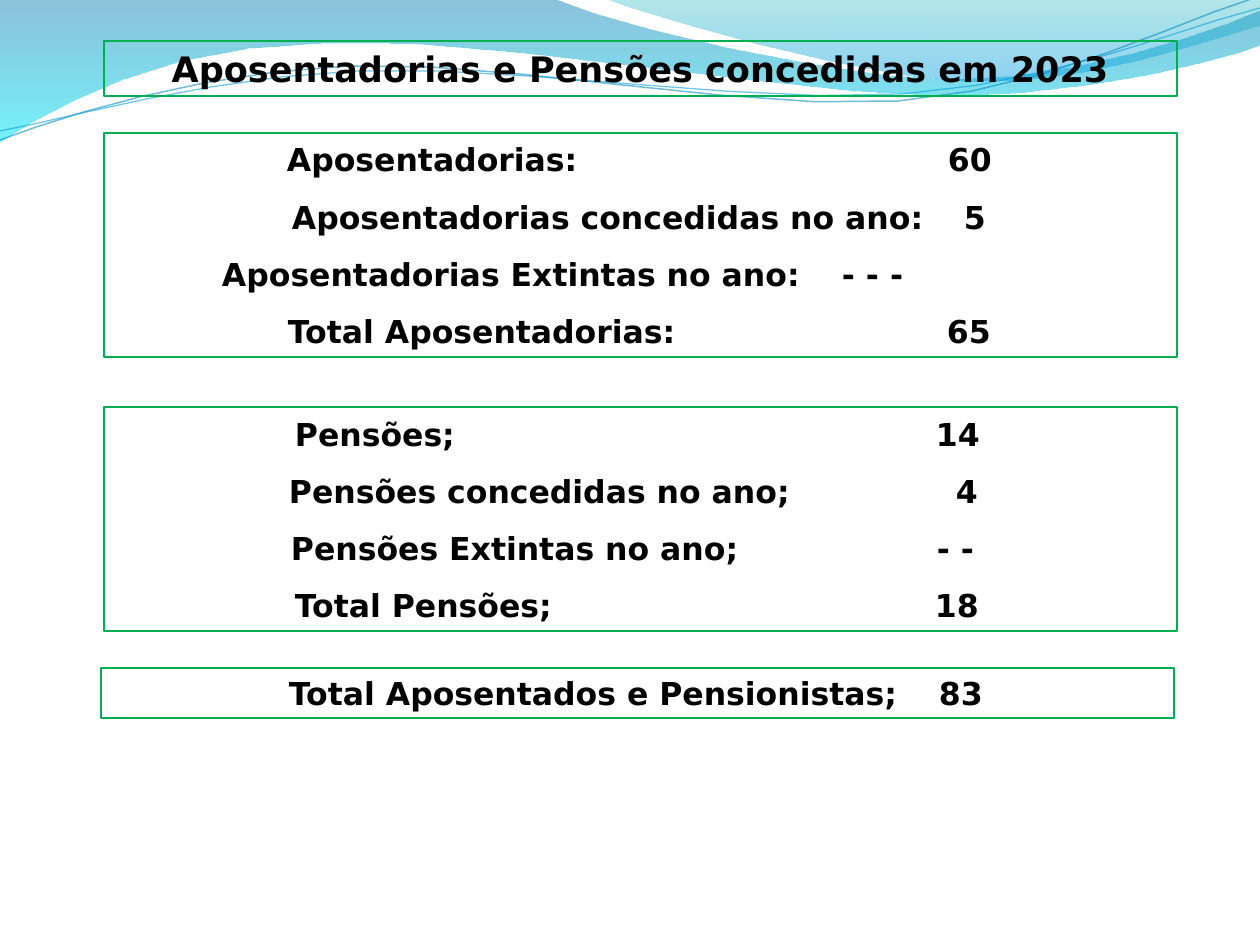
import pptx
import pptx.util
import pptx.dml.color
import pptx.enum.text
import pptx.oxml
import pptx.oxml.ns

RGBColor = pptx.dml.color.RGBColor
GREEN = RGBColor(0x00, 0xB0, 0x50)
BLACK = RGBColor(0x00, 0x00, 0x00)
DEEP_BLUE = RGBColor(0x00, 0x79, 0xAF)
CYAN = RGBColor(0x00, 0xEB, 0xF8)
TEAL = RGBColor(0x00, 0xAD, 0xB6)
SKY = RGBColor(0x00, 0x9B, 0xE5)
LINE_DARK = RGBColor(0x00, 0x8A, 0xBF)
LINE_LIGHT = RGBColor(0x00, 0x9D, 0xD9)

SCALE = 914400 / 126
SLIDE_SIZE = (1260, 945)
BOX_WIDTH = 1073
CURVE_STEPS = 6

TITLE = "Aposentadorias e Pensões concedidas em 2023"
TITLE_BOX = (104, 41, BOX_WIDTH, 55)

# box, then rows of label, value, label x, value x
BLOCKS = [
    ((104, 133, BOX_WIDTH, 224), [
        ("Aposentadorias:", "60", 287, 948),
        ("Aposentadorias concedidas no ano:", "5", 292, 964),
        ("Aposentadorias Extintas no ano:", "- - -", 222, 842),
        ("Total Aposentadorias:", "65", 288, 947),
    ]),
    ((104, 407, BOX_WIDTH, 224), [
        ("Pensões;", "14", 295, 936),
        ("Pensões concedidas no ano;", "4", 289, 956),
        ("Pensões Extintas no ano;", "- -", 291, 937),
        ("Total Pensões;", "18", 295, 935),
    ]),
    ((101, 668, BOX_WIDTH, 50), [
        ("Total Aposentados e Pensionistas;", "83", 289, 939),
    ]),
]

# Two-number steps are straight, six-number steps are Bézier curves
WAVES = [
    {"start": (0, 0),
     "steps": [(554, -1), (600, 21, 837, 79, 955, 79), (1075, 79, 1207, 33, 1260, 11),
               (1261, 45), (1238, 55, 1096, 96, 940, 96), (784, 94, 481, 35, 324, 43),
               (163, 45, 58, 105, -1, 142)],
     "stops": [(DEEP_BLUE, 45), (CYAN, 55)]},
    {"start": (604, -1),
     "steps": [(641, 14, 859, 78, 969, 82), (1079, 87, 1211, 40, 1260, 26), (1260, 0)],
     "stops": [(TEAL, 30), (SKY, 45)]},
    {"start": (0, 140),
     "steps": [(60, 117, 199, 72, 349, 66), (498, 59, 747, 112, 898, 101),
               (1050, 90, 1182, 19, 1257, -3)],
     "line": (LINE_DARK, 0.85, 56)},
    {"start": (0, 131),
     "steps": [(59, 121, 207, 77, 357, 71), (508, 64, 752, 105, 903, 94),
               (1053, 84, 1186, 26, 1260, 8)],
     "line": (LINE_LIGHT, 0.75, 56)},
]

FRAME_FORMAT = {
    "word_wrap": True,
    "auto_size": pptx.enum.text.MSO_AUTO_SIZE.NONE,
    "vertical_anchor": pptx.enum.text.MSO_ANCHOR.MIDDLE,
    "margin_left": 0,
    "margin_right": 0,
    "margin_top": 0,
    "margin_bottom": 0,
}
FONT_FORMAT = {"name": "DejaVu Sans", "bold": True}


def px(length):
    return pptx.util.Emu(round(length * SCALE))


def set_attributes(target, values):
    for name, value in values.items():
        setattr(target, name, value)


def outline_points(start, steps):
    points = [start]
    for step in steps:
        if len(step) == 2:
            points.append(step)
            continue
        controls = [points[-1], step[:2], step[2:4], step[4:]]
        for i in range(1, CURVE_STEPS + 1):
            t = i / CURVE_STEPS
            weights = ((1 - t) ** 3, 3 * t * (1 - t) ** 2, 3 * t * t * (1 - t), t ** 3)
            points.append(tuple(sum(w * c[axis] for w, c in zip(weights, controls))
                                for axis in (0, 1)))
    return [(px(x), px(y)) for x, y in points]


def set_opacity(shape, percentages):
    colors = shape._element.spPr.findall(".//" + pptx.oxml.ns.qn("a:srgbClr"))
    for color, percentage in zip(colors, percentages):
        color.append(pptx.oxml.parse_xml(
            f'<a:alpha {pptx.oxml.ns.nsdecls("a")} val="{percentage * 1000}"/>'))


def add_wave(slide, wave, depth):
    points = outline_points(wave["start"], wave["steps"])
    builder = slide.shapes.build_freeform(*points[0], scale=1.0)
    builder.add_line_segments(points[1:], close="stops" in wave)
    shape = builder.convert_to_shape()
    shape.shadow.inherit = False
    if "stops" in wave:
        shape.fill.gradient()
        shape.fill.gradient_angle = 270
        for stop, (color, _) in zip(shape.fill.gradient_stops, wave["stops"]):
            stop.color.rgb = color
        shape.line.fill.background()
        set_opacity(shape, [opacity for _, opacity in wave["stops"]])
    else:
        color, width, opacity = wave["line"]
        shape.fill.background()
        shape.line.color.rgb = color
        shape.line.width = pptx.util.Pt(width)
        set_opacity(shape, [opacity])
    slide.shapes._spTree.insert(2 + depth, shape._element)


def format_box(shape, box):
    set_attributes(shape, dict(zip(("left", "top", "width", "height"), map(px, box))))
    shape.line.color.rgb = GREEN
    shape.line.width = pptx.util.Pt(0.75)
    set_attributes(shape.text_frame, FRAME_FORMAT)


def format_paragraph(paragraph, size, alignment, space_before=0):
    paragraph.alignment = alignment
    paragraph.space_before = pptx.util.Pt(space_before)
    set_attributes(paragraph.font, {**FONT_FORMAT, "size": pptx.util.Pt(size)})
    paragraph.font.color.rgb = BLACK


def add_block(slide, box, rows):
    shape = slide.shapes.add_textbox(*map(px, box))
    format_box(shape, box)
    frame = shape.text_frame
    for i, (label, value, *stops) in enumerate(rows):
        paragraph = frame.add_paragraph() if i else frame.paragraphs[0]
        paragraph.text = f"\t{label}\t{value}"
        tabs = "".join(f'<a:tab pos="{px(x - box[0])}" algn="l"/>' for x in stops)
        paragraph._p.get_or_add_pPr().append(pptx.oxml.parse_xml(
            f'<a:tabLst {pptx.oxml.ns.nsdecls("a")}>{tabs}</a:tabLst>'))
        format_paragraph(paragraph, 18, pptx.enum.text.PP_ALIGN.LEFT, 11 if i else 0)


def main():
    presentation = pptx.Presentation()
    presentation.slide_width, presentation.slide_height = map(px, SLIDE_SIZE)
    slide = presentation.slides.add_slide(presentation.slide_layouts.get_by_name("Title Only"))

    for depth, wave in enumerate(WAVES):
        add_wave(slide, wave, depth)

    title = slide.shapes.title
    format_box(title, TITLE_BOX)
    title.text_frame.text = TITLE
    format_paragraph(title.text_frame.paragraphs[0], 20, pptx.enum.text.PP_ALIGN.CENTER)

    for box, rows in BLOCKS:
        add_block(slide, box, rows)

    presentation.save("out.pptx")


if __name__ == "__main__":
    main()
